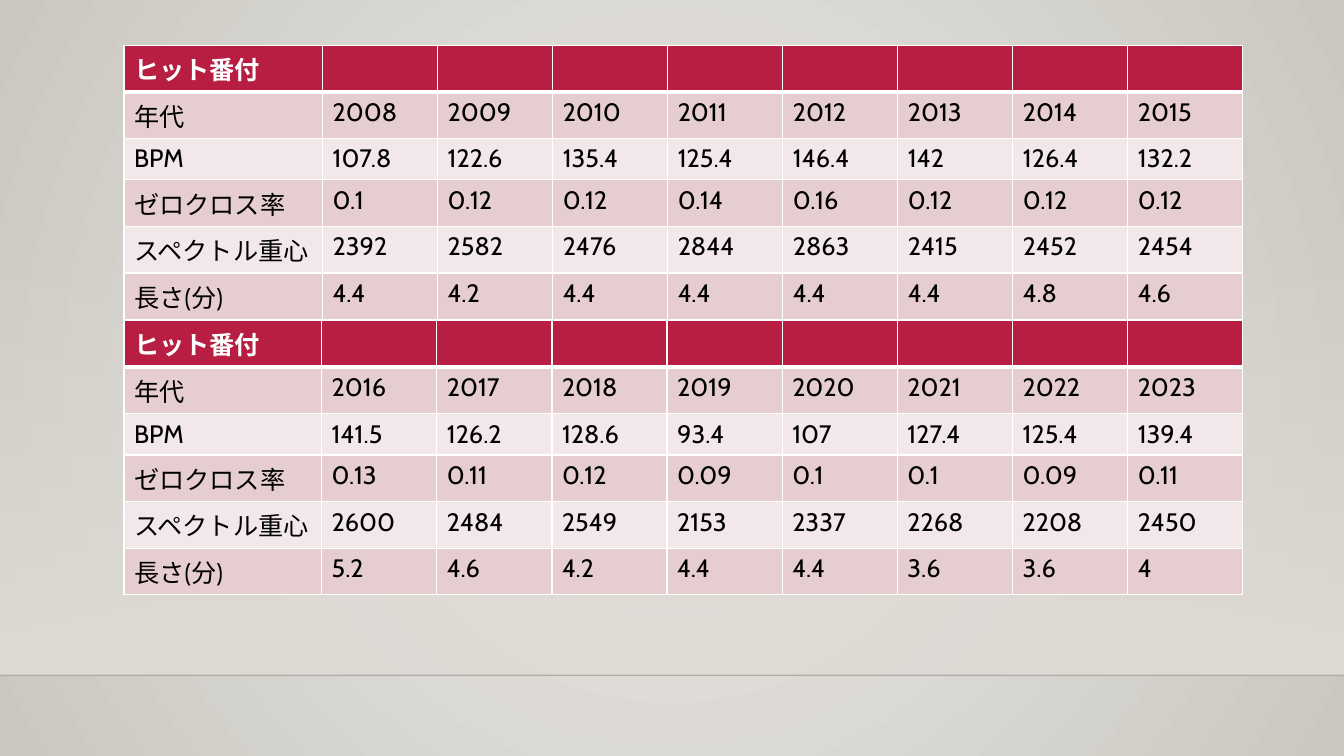
from lxml import etree
from pptx import Presentation
from pptx.dml.color import RGBColor
from pptx.enum.shapes import MSO_CONNECTOR, MSO_SHAPE
from pptx.oxml.ns import nsdecls, qn
from pptx.util import Inches, Pt

STRAIGHT, RECT = MSO_CONNECTOR.STRAIGHT, MSO_SHAPE.RECTANGLE

TITLE = "ヒット番付"
LABELS = ["年代", "BPM", "ゼロクロス率", "スペクトル重心", "長さ(分)"]
TABLES = [
    {"top": 0.45, "label_width": 1.97, "rows": [
        ["2008", "2009", "2010", "2011", "2012", "2013", "2014", "2015"],
        ["107.8", "122.6", "135.4", "125.4", "146.4", "142", "126.4", "132.2"],
        ["0.1", "0.12", "0.12", "0.14", "0.16", "0.12", "0.12", "0.12"],
        ["2392", "2582", "2476", "2844", "2863", "2415", "2452", "2454"],
        ["4.4", "4.2", "4.4", "4.4", "4.4", "4.4", "4.8", "4.6"],
    ]},
    {"top": 3.18, "label_width": 1.96, "rows": [
        ["2016", "2017", "2018", "2019", "2020", "2021", "2022", "2023"],
        ["141.5", "126.2", "128.6", "93.4", "107", "127.4", "125.4", "139.4"],
        ["0.13", "0.11", "0.12", "0.09", "0.1", "0.1", "0.09", "0.11"],
        ["2600", "2484", "2549", "2153", "2337", "2268", "2208", "2450"],
        ["5.2", "4.6", "4.2", "4.4", "4.4", "3.6", "3.6", "4"],
    ]},
]
LEFT, WIDTH = 1.23, 11.1
HEADER_HEIGHT, ROW_HEIGHT = 0.44, 0.41
HEADER_FILL, BAND_FILLS = "B71E42", ["E6CDCF", "F3E8E9"]
HEADER_FONT = {"name": "Cabin", "size": Pt(18), "bold": True}
BODY_FONT = {"name": "Cabin", "size": Pt(18), "bold": False}
SLIDE_W, SLIDE_H = 13.33, 7.5
WALL_TOP, FLOOR_TOP = 2.21, 6.7


def rgb(value):
    return RGBColor.from_string(value)


def xml(body):
    """Parse one DrawingML element, given without its a: prefix declaration."""
    head, rest = body.split(">", 1)
    slash = "/" if head.endswith("/") else ""
    return etree.fromstring(f"{head.rstrip('/')} {nsdecls('a')}{slash}>{rest}")


def set_gradient(fill, element, stops, direction):
    """Fill with (position, colour, opacity) stops in percent."""
    fill.gradient()
    grad = element.find(".//" + qn("a:gradFill"))
    for child in list(grad):
        grad.remove(child)
    items = "".join(
        f'<a:gs pos="{pos * 1000}"><a:srgbClr val="{color}">'
        f'<a:alpha val="{alpha * 1000}"/></a:srgbClr></a:gs>'
        for pos, color, alpha in stops)
    grad.append(xml(f"<a:gsLst>{items}</a:gsLst>"))
    grad.append(xml(direction))


def set_borders(cell, widths):
    """Draw white borders; widths are points for left, right, top, bottom."""
    tcPr = cell._tc.get_or_add_tcPr()
    for i, (side, width) in enumerate(zip("LRTB", widths)):
        tcPr.insert(i, xml(
            f'<a:ln{side} w="{Pt(width)}"><a:solidFill><a:srgbClr val="FFFFFF"/>'
            f'</a:solidFill></a:ln{side}>'))


def fill_cell(cell, text, row):
    cell.fill.solid()
    cell.fill.fore_color.rgb = rgb(BAND_FILLS[(row - 1) % 2] if row else HEADER_FILL)
    set_borders(cell, (1, 1, 3 if row == 1 else 1, 1 if row else 3))
    p = cell.text_frame.paragraphs[0]
    font = p.font
    if text:
        r = p.add_run()
        r.text = text
        font = r.font
    for name, value in (BODY_FONT if row else HEADER_FONT).items():
        setattr(font, name, value)
    font.color.rgb = rgb("000000" if row else "FFFFFF")


def add_music_table(slide, top, label_width, rows):
    grid = [[TITLE] + [""] * len(rows[0])]
    grid += [[label] + values for label, values in zip(LABELS, rows)]
    heights = [HEADER_HEIGHT] + [ROW_HEIGHT] * len(rows)
    table = slide.shapes.add_table(
        len(grid), len(grid[0]), Inches(LEFT), Inches(top),
        Inches(WIDTH), Inches(sum(heights))).table
    table.first_row = table.horz_banding = False
    value_width = (WIDTH - label_width) / len(rows[0])
    for i, column in enumerate(table.columns):
        column.width = Inches(value_width if i else label_width)
    for row, height in zip(table.rows, heights):
        row.height = Inches(height)
    for i, texts in enumerate(grid):
        for j, text in enumerate(texts):
            fill_cell(table.cell(i, j), text, i)


def add_backdrop(slide):
    set_gradient(
        slide.background.fill, slide.element,
        [(0, "ECEAE7", 100), (100, "CAC7C1", 100)],
        '<a:path path="circle"><a:fillToRect l="50000" t="50000" r="50000" b="50000"/></a:path>')
    wall = slide.shapes.add_shape(
        RECT, 0, Inches(WALL_TOP), Inches(SLIDE_W), Inches(FLOOR_TOP - WALL_TOP))
    wall.shadow.inherit = False
    wall.line.fill.background()
    set_gradient(
        wall.fill, wall.element, [(0, "DFDBD5", 0), (100, "DFDBD5", 100)],
        '<a:lin ang="5400000" scaled="0"/>')
    edge = slide.shapes.add_connector(
        STRAIGHT, 0, Inches(FLOOR_TOP), Inches(SLIDE_W), Inches(FLOOR_TOP))
    edge.line.width = Pt(1)
    edge.line.color.rgb = rgb("000001")
    edge.element.find(".//" + qn("a:srgbClr")).append(xml('<a:alpha val="20000"/>'))
    edge.element.spPr.append(xml("<a:effectLst/>"))


def main():
    prs = Presentation()
    prs.slide_width, prs.slide_height = Inches(SLIDE_W), Inches(SLIDE_H)
    slide = prs.slides.add_slide(prs.slide_layouts[6])
    add_backdrop(slide)
    for table in TABLES:
        add_music_table(slide, **table)
    prs.save("out.pptx")


if __name__ == "__main__":
    main()
